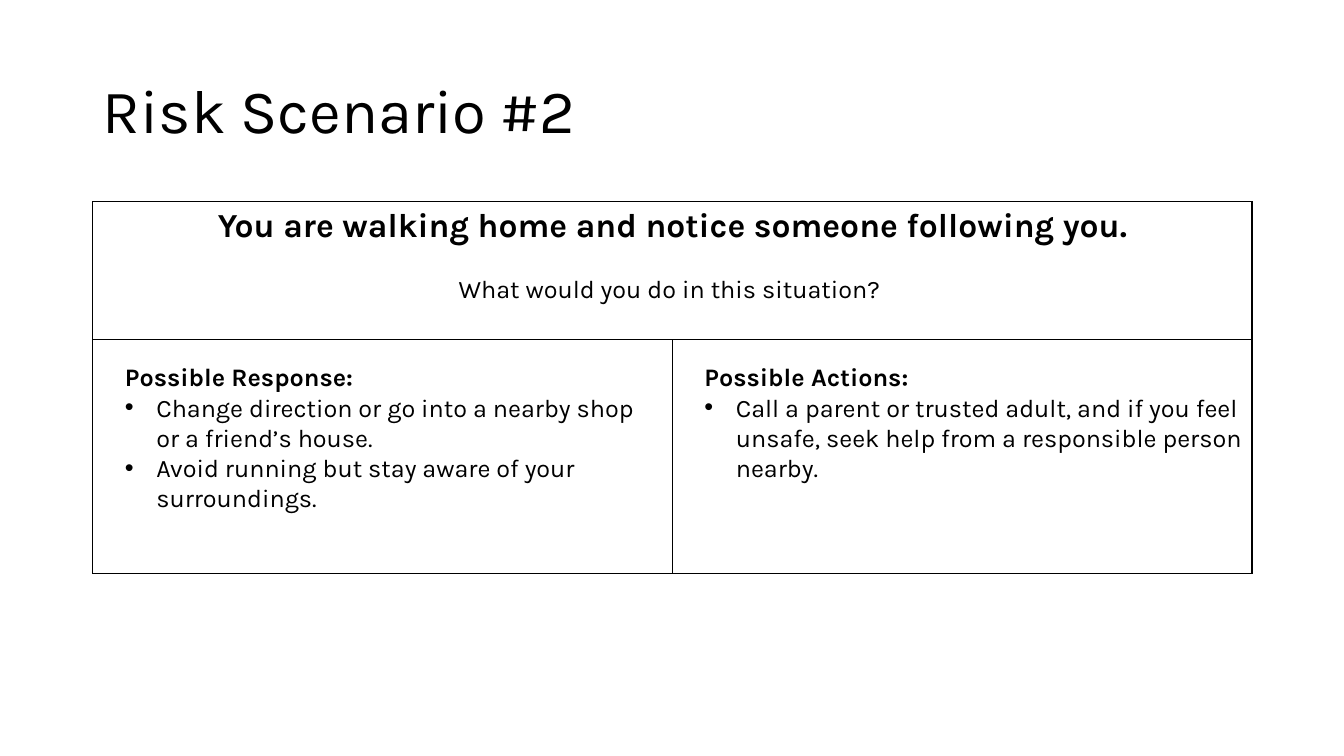
import pptx
import pptx.dml.color
import pptx.enum.text
import pptx.oxml
import pptx.oxml.ns
import pptx.util

Cm = pptx.util.Cm
Pt = pptx.util.Pt
ALIGN = pptx.enum.text.PP_ALIGN
ANCHOR = pptx.enum.text.MSO_ANCHOR
COLORS = {"ink": "000000"}
FONT = "Karla"
LEFT, WIDTH = 2.34, 29.21
HANG = Cm(0.79)
BORDER_SIDES = ("lnL", "lnR", "lnT", "lnB")
NOTES = [
    ("Possible Response:", [
        "Change direction or go into a nearby shop or a friend’s house.",
        "Avoid running but stay aware of your surroundings.",
    ]),
    ("Possible Actions:", [
        "Call a parent or trusted adult, and if you feel unsafe, "
        "seek help from a responsible person nearby.",
    ]),
]


def apply_format(target, values):
    for name, value in values.items():
        setattr(target, name, value)


def write_span(para, text, size, bold=False):
    span = para.add_run()
    span.text = text
    apply_format(span.font, {"name": FONT, "size": Pt(size), "bold": bold})
    span.font.color.rgb = pptx.dml.color.RGBColor.from_string(COLORS["ink"])


def add_bullet(para):
    properties = para._p.get_or_add_pPr()
    properties.set("marL", str(HANG))
    properties.set("indent", str(-HANG))
    namespace = pptx.oxml.ns.nsdecls("a")
    for element in ('buFont {} typeface="Arial"', 'buChar {} char="•"'):
        properties.append(pptx.oxml.parse_xml(f"<a:{element.format(namespace)}/>"))


def add_title(page, text):
    title = page.shapes.title
    apply_format(title, {"left": Cm(LEFT), "top": Cm(1.02),
                         "width": Cm(WIDTH), "height": Cm(3.68)})
    title.text_frame.vertical_anchor = ANCHOR.MIDDLE
    para = title.text_frame.paragraphs[0]
    apply_format(para, {"alignment": ALIGN.LEFT, "line_spacing": 0.9})
    write_span(para, text, 44)


def style_cell(cell):
    properties = cell._tc.get_or_add_tcPr()
    for side in BORDER_SIDES:
        properties.append(pptx.oxml.parse_xml(
            f'<a:{side} {pptx.oxml.ns.nsdecls("a")} w="{Pt(1)}"><a:solidFill>'
            f'<a:srgbClr val="{COLORS["ink"]}"/></a:solidFill></a:{side}>'))
    cell.fill.background()


def add_scenario_table(page, scenario, question):
    row_heights = (3.48, 5.89)
    table = page.shapes.add_table(2, 2, Cm(LEFT), Cm(5.08), Cm(WIDTH),
                                  Cm(sum(row_heights))).table
    apply_format(table, {"first_row": False, "horz_banding": False})
    for row, height in zip(table.rows, row_heights):
        row.height = Cm(height)
    for cell in table.iter_cells():
        style_cell(cell)
    heading = table.cell(0, 0)
    heading.merge(table.cell(0, 1))
    para = heading.text_frame.paragraphs[0]
    para.alignment = ALIGN.CENTER
    write_span(para, scenario, 24, bold=True)
    para = heading.text_frame.add_paragraph()
    apply_format(para, {"alignment": ALIGN.CENTER, "space_before": Pt(21)})
    write_span(para, question, 18)


def add_note(page, left, heading, points):
    box = page.shapes.add_textbox(Cm(left), Cm(8.99), Cm(14.05), Cm(4.11))
    frame = box.text_frame
    apply_format(frame, {"word_wrap": True,
                         "auto_size": pptx.enum.text.MSO_AUTO_SIZE.SHAPE_TO_FIT_TEXT})
    write_span(frame.paragraphs[0], heading, 18, bold=True)
    for point in points:
        para = frame.add_paragraph()
        add_bullet(para)
        write_span(para, point, 18)


def main():
    deck = pptx.Presentation()
    apply_format(deck, {"slide_width": Cm(33.87), "slide_height": Cm(19.05)})
    page = deck.slides.add_slide(deck.slide_layouts[5])
    add_title(page, "Risk Scenario #2")
    add_scenario_table(page, "You are walking home and notice someone following you.",
                       "What would you do in this situation? ")
    for column, (heading, points) in enumerate(NOTES):
        add_note(page, 2.9 + column * WIDTH / 2, heading, points)
    deck.save("out.pptx")


if __name__ == "__main__":
    main()
